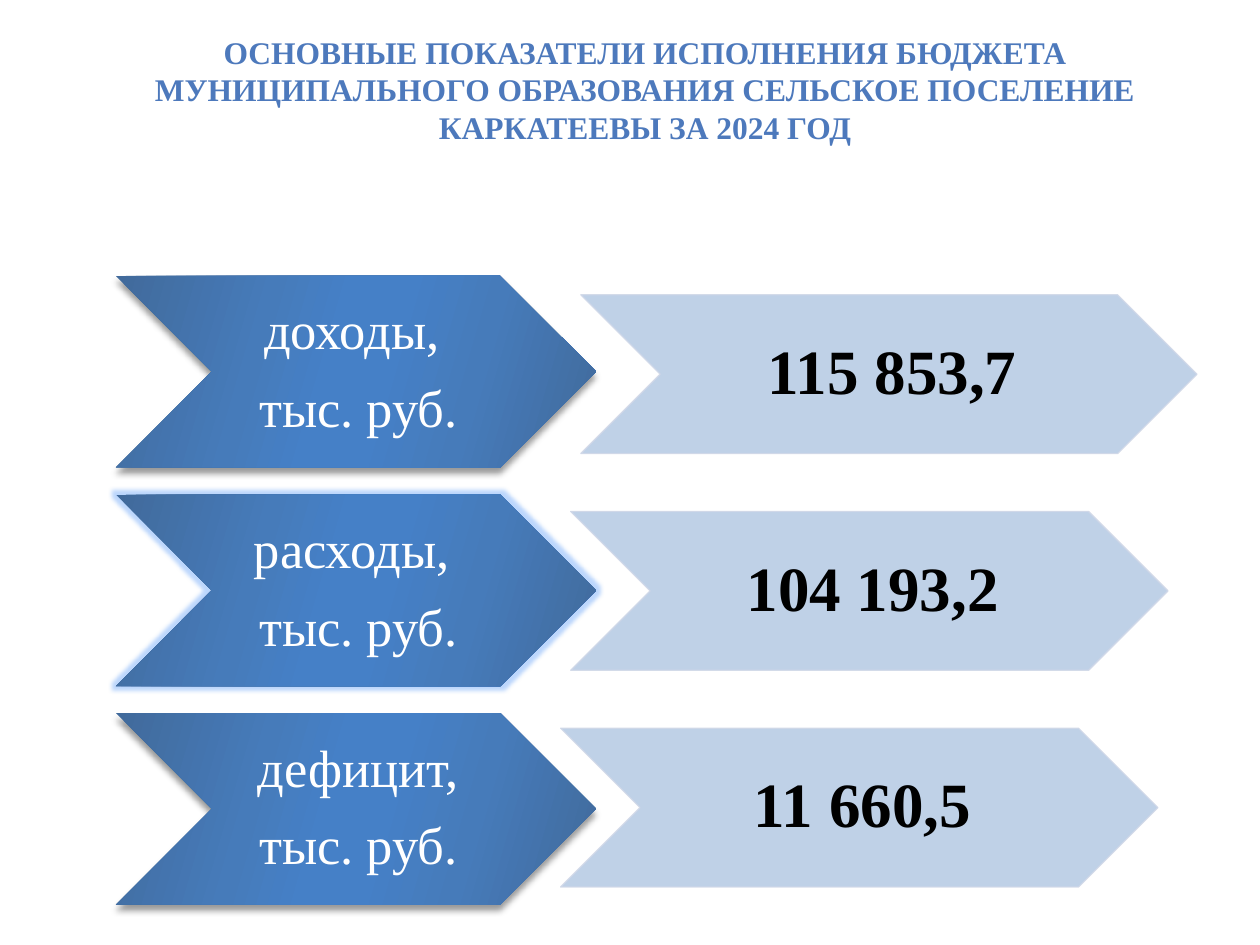
from dataclasses import dataclass

from lxml.etree import SubElement
from pptx import Presentation
from pptx.dml.color import RGBColor
from pptx.enum.shapes import MSO_SHAPE as Preset
from pptx.enum.text import MSO_ANCHOR as Anchor, PP_ALIGN as Align
from pptx.oxml.ns import qn
from pptx.util import Inches, Pt


@dataclass(frozen=True)
class Theme:
    """Colours, font and type sizes of the slide."""
    font: str = "Times New Roman"
    title_size: int = 18
    label_size: int = 30
    value_size: int = 36
    label_color: str = "FFFFFF"
    value_color: str = "000000"
    value_fill: str = "B9CDE5"
    value_line: str = "D0D8E8"
    shadow: str = "000000"
    glow: str = "8FBBFA"
    label_stops: tuple = ((0, "416A9B"), (30, "467BBA"), (45, "4580C7"),
                          (55, "4580C7"), (73, "467BBA"), (100, "416A9B"))
    title_stops: tuple = ((0, "7494C9"), (49, "4D79BC"), (50, "346AAA"),
                          (92, "325F94"), (100, "315D91"))


THEME = Theme()
TITLE = ("ОСНОВНЫЕ ПОКАЗАТЕЛИ ИСПОЛНЕНИЯ БЮДЖЕТА МУНИЦИПАЛЬНОГО "
         "ОБРАЗОВАНИЯ СЕЛЬСКОЕ ПОСЕЛЕНИЕ КАРКАТЕЕВЫ ЗА 2024 ГОД")
UNIT = "тыс. руб."
INDICATORS = (("доходы, ", "115 853,7", 4.61, 4.89, False),
              ("расходы, ", "104 193,2", 4.53, 4.74, True),
              ("дефицит,", "11 660,5", 4.45, 4.74, False))
LABEL_LEFT, LABEL_WIDTH, LABEL_HEIGHT = 0.92, 3.81, 1.52
LABEL_TOP, LABEL_STEP = 2.19, 1.735
VALUE_TOP, VALUE_STEP, VALUE_HEIGHT = 2.34, 1.72, 1.26


def add_color(parent, color, alpha=100):
    """Append an RGB colour with opacity in percent."""
    rgb = SubElement(parent, qn("a:srgbClr"), val=color)
    if alpha < 100:
        SubElement(rgb, qn("a:alpha"), val=str(alpha * 1000))


def paint_gradient(fill, properties, stops, angle):
    """Fill a shape or run with a linear gradient."""
    fill.gradient()
    gradient = properties.find(qn("a:gradFill"))
    for child in list(gradient):
        gradient.remove(child)
    stop_list = SubElement(gradient, qn("a:gsLst"))
    for position, color in stops:
        add_color(SubElement(stop_list, qn("a:gs"), pos=str(position * 1000)), color)
    SubElement(gradient, qn("a:lin"), ang=str(angle * 60000), scaled="0")


def add_effect(shape, glowing):
    """Give a label chevron its glow or its drop shadow."""
    effects = shape._element.spPr.find(qn("a:effectLst"))
    if glowing:
        add_color(SubElement(effects, qn("a:glow"), rad=str(Pt(5))), THEME.glow, 60)
    else:
        shadow = SubElement(effects, qn("a:outerShdw"), blurRad=str(Pt(4)),
                            dist=str(Pt(3.4)), dir="5400000", rotWithShape="0")
        add_color(shadow, THEME.shadow, 40)


def add_chevron(slide, left, top, width, height):
    """Add a bare chevron."""
    chevron = slide.shapes.add_shape(Preset.CHEVRON, Inches(left), Inches(top),
                                     Inches(width), Inches(height))
    chevron.shadow.inherit = False
    return chevron


def add_text(slide, left, top, width, height, lines, size, bold=False):
    """Add a centred text box and return its frame and runs."""
    frame = slide.shapes.add_textbox(Inches(left), Inches(top),
                                     Inches(width), Inches(height)).text_frame
    frame.word_wrap = True
    runs = []
    for index, line in enumerate(lines):
        paragraph = frame.paragraphs[0] if index == 0 else frame.add_paragraph()
        paragraph.alignment = Align.CENTER
        run = paragraph.add_run()
        run.text = line
        run.font.name, run.font.size, run.font.bold = THEME.font, Pt(size), bold
        runs.append(run)
    return frame, runs


def add_chevron_text(slide, left, top, width, height, lines, size, color, inset, bold=False):
    """Add text between the notch and the point of a chevron."""
    notch = height / 2
    frame, runs = add_text(slide, left + notch, top, width - height, height, lines, size, bold)
    frame.vertical_anchor = Anchor.MIDDLE
    frame.margin_left, frame.margin_right = Inches(inset), 0
    frame.margin_top = frame.margin_bottom = Inches(inset / 2)
    for paragraph, run in zip(frame.paragraphs, runs):
        paragraph.line_spacing = 0.9
        paragraph.space_after = Pt(size * 0.4)
        run.font.color.rgb = RGBColor.from_string(color)


def add_label(slide, top, name, glowing):
    """Add the gradient chevron that names an indicator."""
    area = (LABEL_LEFT, top, LABEL_WIDTH, LABEL_HEIGHT)
    chevron = add_chevron(slide, *area)
    paint_gradient(chevron.fill, chevron._element.spPr, THEME.label_stops, 16)
    chevron.line.fill.background()
    add_effect(chevron, glowing)
    add_chevron_text(slide, *area, (name, UNIT), THEME.label_size, THEME.label_color, 0.04)


def add_value(slide, left, top, width, amount):
    """Add the pale chevron that holds an amount."""
    area = (left, top, width, VALUE_HEIGHT)
    chevron = add_chevron(slide, *area)
    chevron.line.width = Pt(0.75)
    for fill, color in ((chevron.fill, THEME.value_fill), (chevron.line.fill, THEME.value_line)):
        fill.solid()
        fill.fore_color.rgb = RGBColor.from_string(color)
    for rgb in chevron._element.spPr.iter(qn("a:srgbClr")):
        SubElement(rgb, qn("a:alpha"), val="90000")
    add_chevron_text(slide, *area, (amount,), THEME.value_size, THEME.value_color, 0.05, True)


def add_title(slide):
    """Add the slide title."""
    _, (heading,) = add_text(slide, 0.67, 0.21, 8.9, 1.01, (TITLE,), THEME.title_size, True)
    paint_gradient(heading.font.fill, heading.font._element, THEME.title_stops, 90)


def main():
    """Build and save the slide."""
    deck = Presentation()
    deck.slide_width, deck.slide_height = Inches(10), Inches(7.5)
    slide = deck.slides.add_slide(deck.slide_layouts[6])
    for row, (name, amount, left, width, glowing) in enumerate(INDICATORS):
        add_label(slide, LABEL_TOP + row * LABEL_STEP, name, glowing)
        add_value(slide, left, VALUE_TOP + row * VALUE_STEP, width, amount)
    add_title(slide)
    deck.save("out.pptx")


if __name__ == "__main__":
    main()
